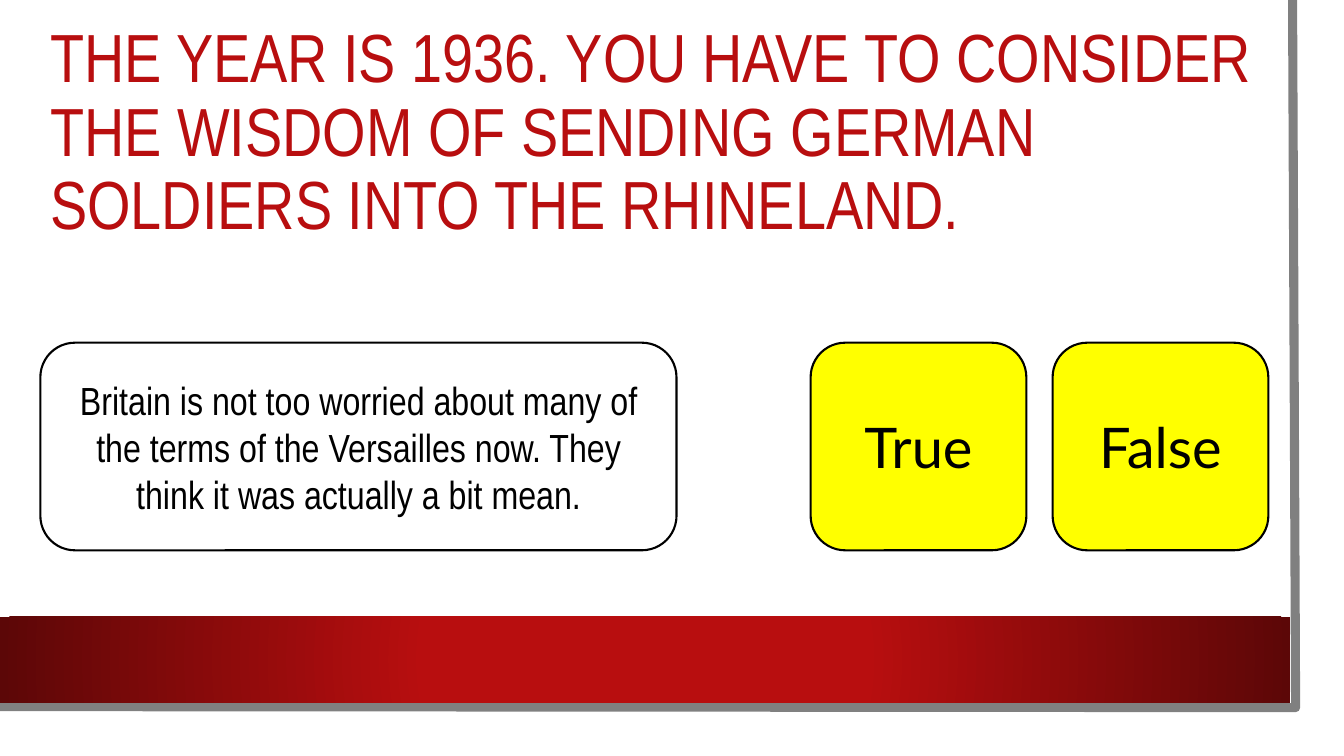
from lxml import etree
from pptx import Presentation
from pptx.dml.color import RGBColor
from pptx.enum.shapes import MSO_SHAPE
from pptx.enum.text import MSO_ANCHOR, PP_ALIGN
from pptx.oxml.ns import qn
from pptx.util import Inches, Pt

RECT = MSO_SHAPE.RECTANGLE
ROUND = MSO_SHAPE.ROUNDED_RECTANGLE
MID = MSO_ANCHOR.MIDDLE
LEFT = PP_ALIGN.LEFT
CENTER = PP_ALIGN.CENTER

COLORS = {
    "red": "B80E0F",
    "dark": "5C0707",
    "grey": "808080",
    "yellow": "FFFF00",
    "white": "FFFFFF",
    "black": "000000",
}


def color(name):
    return RGBColor.from_string(COLORS[name])


def write(shape, text, size, face, tint, align, space=None):
    frame = shape.text_frame
    for key, value in {"word_wrap": True, "vertical_anchor": MID}.items():
        setattr(frame, key, value)
    para = frame.paragraphs[0]
    for key, value in {"text": text, "alignment": align, "line_spacing": space}.items():
        setattr(para, key, value)
    font = para.runs[0].font
    for key, value in {"size": Pt(size), "name": face}.items():
        setattr(font, key, value)
    font.color.rgb = color(tint)


prs = Presentation()
prs.slide_width = Inches(13.33)
prs.slide_height = Inches(7.5)
slide = prs.slides.add_slide(prs.slide_layouts[6])
shapes = slide.shapes

pen = shapes.build_freeform(Inches(12.82), 0)
pen.add_line_segments(
    [(Inches(12.85), Inches(7.02)), (0, Inches(7.01))], close=False
)
edge = pen.convert_to_shape()
edge.shadow.inherit = False
edge.fill.background()
edge.line.color.rgb = color("grey")
edge.line.width = Pt(6.5)

band = shapes.add_shape(RECT, 0, Inches(6.12), Inches(12.8), Inches(0.85))
band.shadow.inherit = False
band.line.fill.background()
band.fill.gradient()
for stop, (place, name) in zip(
    band.fill.gradient_stops, [(0.34, "red"), (1.0, "dark")]
):
    stop.position = place
    stop.color.rgb = color(name)
grad = band._element.spPr.find(qn("a:gradFill"))
grad.remove(grad.find(qn("a:lin")))
glow = etree.SubElement(grad, qn("a:path"), {"path": "circle"})
etree.SubElement(glow, qn("a:fillToRect"), {side: "50000" for side in "ltrb"})

title = shapes.add_textbox(Inches(0.4), Inches(0.7), Inches(12.28), Inches(1.26))
write(
    title,
    "THE YEAR IS 1936. YOU HAVE TO CONSIDER THE WISDOM OF SENDING GERMAN "
    "SOLDIERS INTO THE RHINELAND.",
    48.6, "Arial Narrow", "red", LEFT, 0.9,
)

claim = (
    "Britain is not too worried about many of the terms of the Versailles now. "
    "They think it was actually a bit mean."
)
cards = [
    (0.4, 6.31, "white", claim, 28, "Arial Narrow"),
    (8.04, 2.14, "yellow", "True", 40, "Lato"),
    (10.44, 2.14, "yellow", "False", 40, "Lato"),
]
for left, width, tint, text, size, face in cards:
    card = shapes.add_shape(
        ROUND, Inches(left), Inches(3.4), Inches(width), Inches(2.06)
    )
    card.shadow.inherit = False
    card.fill.solid()
    card.fill.fore_color.rgb = color(tint)
    card.line.color.rgb = color("black")
    card.line.width = Pt(1.5)
    write(card, text, size, face, "black", CENTER)

prs.save("out.pptx")
